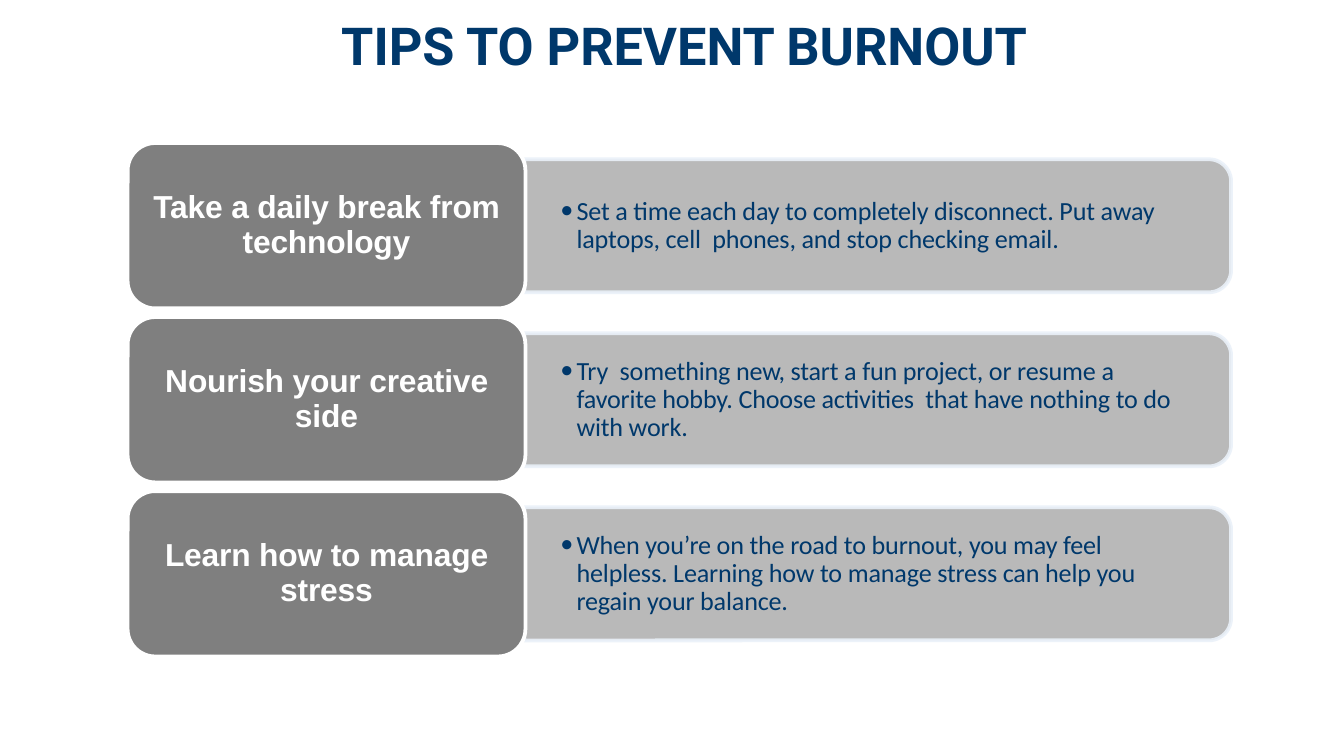
import pptx
import pptx.dml.color
import pptx.enum.shapes
import pptx.enum.text
import pptx.oxml
import pptx.oxml.ns
import pptx.util
from dataclasses import dataclass

Inches = pptx.util.Inches
Pt = pptx.util.Pt
RGB = pptx.dml.color.RGBColor.from_string
MSO_SHAPE = pptx.enum.shapes.MSO_SHAPE
ALIGN = pptx.enum.text.PP_ALIGN
MIDDLE = pptx.enum.text.MSO_ANCHOR.MIDDLE
DRAWING_NS = pptx.oxml.ns.nsdecls("a")


@dataclass(frozen=True)
class Theme:
    navy: str = "00386B"
    white: str = "FFFFFF"
    label_fill: str = "7F7F7F"
    panel_fill: str = "B2B2B2"
    panel_line: str = "EAF1F9"
    panel_opacity: int = 90
    line_width: float = 2
    title_size: int = 28
    label_size: int = 17
    detail_size: int = 14
    letter_spacing: float = -0.1


theme = Theme()

TIPS = [
    ("Take a daily break from technology",
     "Set a time each day to completely disconnect. Put away laptops, cell  phones, "
     "and stop checking email."),
    ("Nourish your creative side",
     "Try  something new, start a fun project, or resume a favorite hobby. "
     "Choose activities  that have nothing to do with work."),
    ("Learn how to manage stress",
     "When you’re on the road to burnout, you may feel helpless. "
     "Learning how to manage stress can help you regain your balance."),
]

LABEL_LEFT, LABEL_WIDTH, LABEL_HEIGHT = 0.95, 2.96, 1.23
PANEL_LEFT, PANEL_LENGTH, PANEL_HEIGHT = 3.9, 5.26, 0.99
DETAIL_WIDTH, DETAIL_HEIGHT = 5.21, 0.89
FIRST_CENTER, LAST_CENTER = 1.68, 4.27
ROW_PITCH = (LAST_CENTER - FIRST_CENTER) / (len(TIPS) - 1)


def write_text(shape, text, margins, font_name, size, color, bold=False,
               line_spacing=0.9, letter_spacing=theme.letter_spacing, bullet_indent=None):
    """Fill a shape with one vertically centred paragraph; margins are (side, top and bottom)."""
    frame = shape.text_frame
    frame.word_wrap = True
    frame.vertical_anchor = MIDDLE
    frame.margin_left = frame.margin_right = Inches(margins[0])
    frame.margin_top = frame.margin_bottom = Inches(margins[1])
    frame.text = text
    paragraph = frame.paragraphs[0]
    paragraph.line_spacing = line_spacing
    paragraph.alignment = ALIGN.CENTER
    if bullet_indent:
        paragraph.alignment = ALIGN.LEFT
        paragraph.level = 1
        properties = paragraph._p.get_or_add_pPr()
        properties.set("marL", str(Inches(bullet_indent)))
        properties.set("indent", str(-Inches(bullet_indent)))
        for bullet in (f'buFont {DRAWING_NS} typeface="{font_name}"',
                       f'buChar {DRAWING_NS} char="•"'):
            properties.append(pptx.oxml.parse_xml(f"<a:{bullet}/>"))
    run = paragraph.runs[0]
    run.font.name, run.font.size, run.font.bold = font_name, Pt(size), bold
    run.font.color.rgb = RGB(color)
    run._r.get_or_add_rPr().set("spc", str(round(letter_spacing * 100)))


def paint(shape, fill, line, opacity=100):
    shape.shadow.inherit = False
    shape.fill.solid()
    shape.fill.fore_color.rgb = RGB(fill)
    shape.line.color.rgb = RGB(line)
    shape.line.width = Pt(theme.line_width)
    if opacity < 100:
        for color in shape._element.spPr.iter(pptx.oxml.ns.qn("a:srgbClr")):
            color.append(pptx.oxml.parse_xml(
                f'<a:alpha {DRAWING_NS} val="{opacity * 1000}"/>'))


presentation = pptx.Presentation()
presentation.slide_width = Inches(10)
presentation.slide_height = Inches(10 * 9 / 16)
slide = presentation.slides.add_slide(presentation.slide_layouts[5])

title = slide.shapes.title
title.left, title.top = Inches(1.85), Inches(0.09)
title.width, title.height = Inches(6.48), Inches(0.48)
write_text(title, "TIPS TO PREVENT BURNOUT", (0, 0), "Roboto", theme.title_size,
           theme.navy, bold=True, line_spacing=1.0, letter_spacing=0)

for row, (label_text, detail_text) in enumerate(TIPS):
    center = FIRST_CENTER + row * ROW_PITCH

    # The panel is an upright shape turned a quarter, so its rounded end faces right.
    panel = slide.shapes.add_shape(
        MSO_SHAPE.ROUND_2_SAME_RECTANGLE,
        Inches(PANEL_LEFT + (PANEL_LENGTH - PANEL_HEIGHT) / 2),
        Inches(center - PANEL_LENGTH / 2),
        Inches(PANEL_HEIGHT), Inches(PANEL_LENGTH))
    panel.rotation = 90
    paint(panel, theme.panel_fill, theme.panel_line, theme.panel_opacity)

    detail = slide.shapes.add_textbox(
        Inches(PANEL_LEFT), Inches(center - DETAIL_HEIGHT / 2),
        Inches(DETAIL_WIDTH), Inches(DETAIL_HEIGHT))
    write_text(detail, detail_text, (0.27, 0.14), "Calibri",
               theme.detail_size, theme.navy, bullet_indent=0.12)

    label = slide.shapes.add_shape(
        MSO_SHAPE.ROUNDED_RECTANGLE,
        Inches(LABEL_LEFT), Inches(center - LABEL_HEIGHT / 2),
        Inches(LABEL_WIDTH), Inches(LABEL_HEIGHT))
    paint(label, theme.label_fill, theme.white)
    write_text(label, label_text, (0.07, 0.04), "Arial",
               theme.label_size, theme.white, bold=True)

presentation.save("out.pptx")
